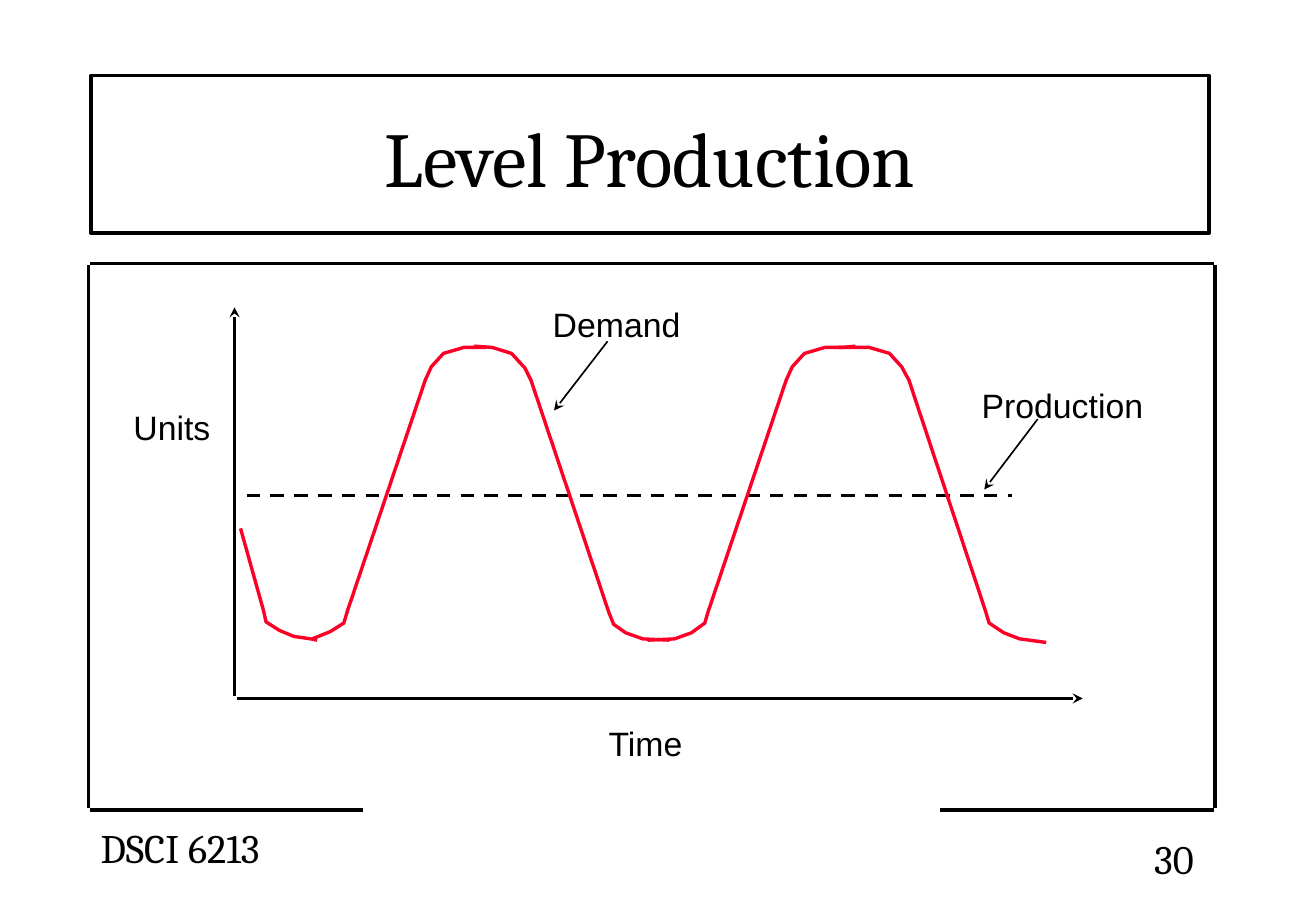
import pptx
import pptx.dml.color
import pptx.enum.dml
import pptx.enum.shapes
import pptx.enum.text
import pptx.util
from lxml import etree
import pptx.oxml.ns

PX = 9144  # 100 px to the inch
COLORS = {"ink": "000000", "demand": "FC0128", "paper": "FFFFFF"}

FRAME_LEFT, FRAME_TOP, FRAME_RIGHT, FRAME_BOTTOM = 73, 217, 1000, 667
FOOTER_RULE = 225

DEMAND_STROKES = [
    [(198, 435), (217, 503), (219, 512), (230, 519), (242, 524), (256, 526), (261, 527)],
    [(400, 286), (382, 286), (365, 291), (355, 302), (350, 313), (286, 503),
     (283, 513), (272, 520), (257, 526)],
    [(390, 285), (405, 286), (421, 291), (432, 303), (437, 313), (501, 504),
     (505, 514), (515, 521), (529, 526), (551, 527)],
    [(704, 285), (694, 286), (679, 286), (662, 291), (652, 302), (647, 313),
     (583, 503), (580, 513), (569, 521), (555, 526), (533, 527)],
    [(690, 286), (715, 286), (732, 291), (742, 302), (748, 313), (811, 503),
     (814, 513), (826, 521), (839, 526), (861, 529)],
]


class SlideBuilder:
    def __init__(self, prs):
        self.slide = prs.slides.add_slide(prs.slide_layouts[6])
        self.shapes = self.slide.shapes
        fill = self.slide.background.fill
        fill.solid()
        fill.fore_color.rgb = self.color("paper")

    def color(self, name):
        return pptx.dml.color.RGBColor.from_string(COLORS[name])

    def stroke(self, sp, color, width):
        sp.line.color.rgb = self.color(color)
        sp.line.width = pptx.util.Pt(width)

    def line(self, start, end, width=2, arrow=False, dashed=False):
        """Draw a straight line; an arrow points at its end."""
        sp = self.shapes.add_connector(
            pptx.enum.shapes.MSO_CONNECTOR.STRAIGHT,
            *(v * PX for v in (*start, *end)))
        self.stroke(sp, "ink", width)
        if dashed:
            sp.line.dash_style = pptx.enum.dml.MSO_LINE.DASH
        qn = pptx.oxml.ns.qn
        if arrow:
            etree.SubElement(sp.line._get_or_add_ln(), qn("a:tailEnd"), type="stealth")
        etree.SubElement(sp._element.spPr, qn("a:effectLst"))

    def rectangle(self, *box):
        sp = self.shapes.add_shape(
            pptx.enum.shapes.MSO_SHAPE.RECTANGLE, *(v * PX for v in box))
        sp.shadow.inherit = False
        sp.fill.background()
        self.stroke(sp, "ink", 2)

    def curve(self, points):
        builder = self.shapes.build_freeform(*points[0], scale=PX)
        builder.add_line_segments(points[1:], close=False)
        sp = builder.convert_to_shape()
        sp.shadow.inherit = False
        sp.fill.background()
        self.stroke(sp, "demand", 2)

    def text(self, text, box, size=20, font="Arial", wrap=True, title=False):
        sp = self.shapes.add_textbox(*(v * PX for v in box))
        tf = sp.text_frame
        tf.word_wrap = wrap
        p = tf.paragraphs[0]
        if title:
            tf.vertical_anchor = pptx.enum.text.MSO_ANCHOR.MIDDLE
            p.alignment = pptx.enum.text.PP_ALIGN.CENTER
        r = p.add_run()
        r.text = text
        r.font.size = pptx.util.Pt(size)
        r.font.name = font
        r.font.color.rgb = self.color("ink")


def draw_frame(s):
    """Draw the content frame, open in the middle of its bottom side."""
    left, right = FRAME_LEFT + 1, FRAME_RIGHT - 1
    s.line((left, FRAME_TOP), (right, FRAME_TOP))
    for x in (FRAME_LEFT, FRAME_RIGHT):
        s.line((x, FRAME_TOP + 1), (x, FRAME_BOTTOM - 2))
    for x in (left, right - FOOTER_RULE):
        s.line((x, FRAME_BOTTOM), (x + FOOTER_RULE, FRAME_BOTTOM))


def draw_graph(s):
    s.line((193, 573), (193, 253), arrow=True)
    s.line((195, 575), (891, 575), arrow=True)
    s.line((203, 408), (833, 408), dashed=True)
    for points in DEMAND_STROKES:
        s.curve(points)
    for start, end in (((500, 281), (456, 338)), ((854, 345), (810, 403))):
        s.line(start, end, width=1, arrow=True)
    for label, x, y, width in (("Time", 491, 590, 117), ("Production", 798, 312, 176),
                               ("Demand", 445, 245, 195), ("Units", 100, 330, 93)):
        s.text(label, (x, y, width, 43))


def main():
    prs = pptx.Presentation()
    prs.slide_width, prs.slide_height = 1083 * PX, 750 * PX
    s = SlideBuilder(prs)
    draw_frame(s)
    s.text("30", (940, 682, 59, 50), 24, "Cambria", wrap=False)
    s.text("DSCI 6213", (73, 673, 173, 50), 24, "Cambria", wrap=False)
    s.rectangle(75, 62, 920, 130)
    s.text("Level Production", (75, 64, 920, 130), 46, "Cambria", title=True)
    draw_graph(s)
    prs.save("out.pptx")


if __name__ == "__main__":
    main()
